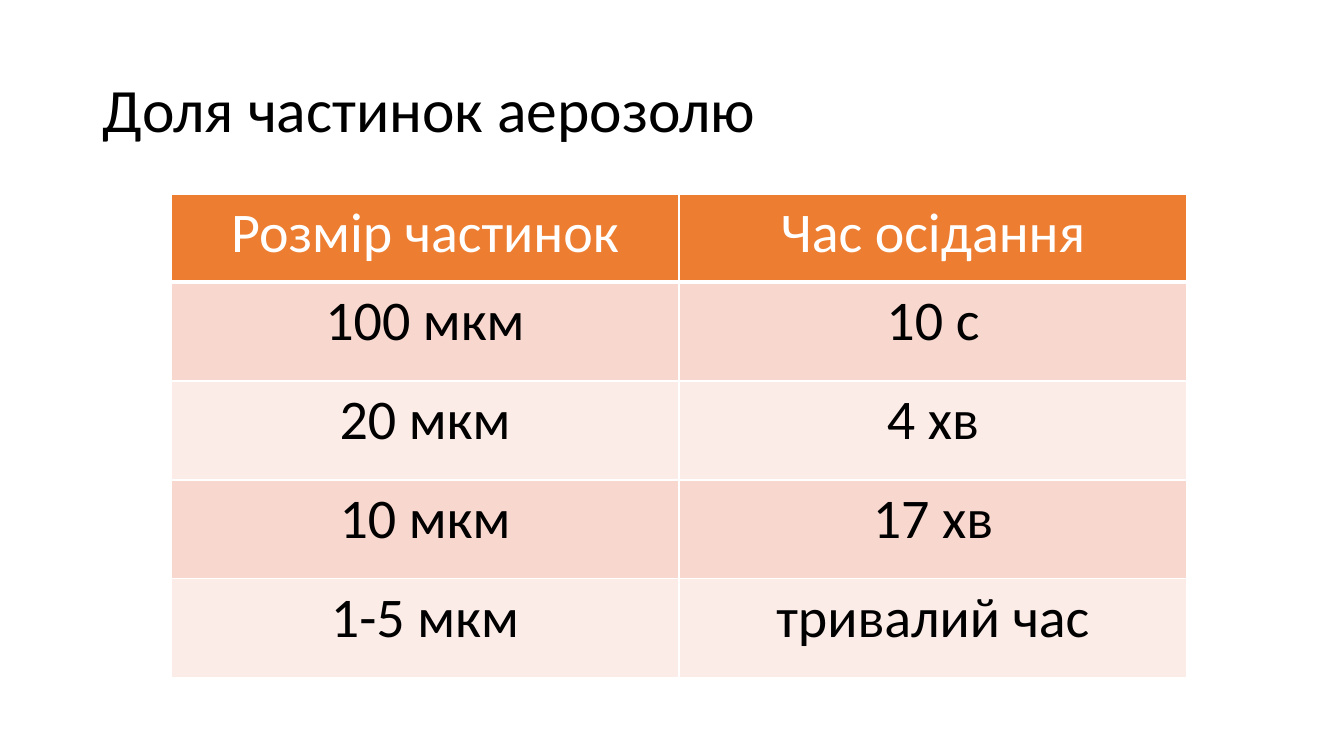
from lxml.etree import SubElement
from pptx import Presentation
from pptx.dml.color import RGBColor
from pptx.enum.text import MSO_ANCHOR as Anchor, PP_ALIGN as Align
from pptx.oxml.ns import qn
from pptx.util import Pt

PX = 914400 / 100.8
FONT = "Calibri"
BLACK, WHITE, ORANGE = "000000", "FFFFFF", "ED7D31"
BANDS = ["F8D7CE", "FCECE8"]

TITLE = "Доля частинок аерозолю"
ROWS = [
    ("Розмір частинок", "Час осідання"),
    ("100 мкм", "10 с"),
    ("20 мкм", "4 хв"),
    ("10 мкм", "17 хв"),
    ("1-5 мкм", "тривалий час"),
]
COLUMN_WIDTH, HEADER_HEIGHT, ROW_HEIGHT = 508, 88, 99


def px(*lengths):
    return [round(length * PX) for length in lengths]


def color(value):
    return RGBColor.from_string(value)


def set_text(frame, text, size, ink, align):
    para = frame.paragraphs[0]
    para.text = text
    para.alignment = align
    para.font.name = FONT
    para.font.size = Pt(size)
    para.font.bold = False
    para.font.color.rgb = color(ink)
    return para


def add_title(page, text):
    box = page.shapes.add_textbox(*px(93, 40, 1159, 146))
    frame = box.text_frame
    frame.word_wrap = True
    frame.vertical_anchor = Anchor.MIDDLE
    para = set_text(frame, text, 44, BLACK, Align.LEFT)
    para.line_spacing = 0.9


def set_borders(cell, bottom):
    """Draw white cell edges, 1 pt wide except for the given bottom width."""
    properties = cell._tc.get_or_add_tcPr()
    for edge, width in (("L", 1), ("R", 1), ("T", 1), ("B", bottom)):
        line = SubElement(properties, qn(f"a:ln{edge}"), w=str(Pt(width)))
        fill = SubElement(line, qn("a:solidFill"))
        SubElement(fill, qn("a:srgbClr"), val=WHITE)


def add_table(page, rows):
    width = COLUMN_WIDTH * len(rows[0])
    height = HEADER_HEIGHT + ROW_HEIGHT * (len(rows) - 1)
    table = page.shapes.add_table(
        len(rows), len(rows[0]), *px(171, 194, width, height)
    ).table
    for column in table.columns:
        column.width = px(COLUMN_WIDTH)[0]
    for index, texts in enumerate(rows):
        header = index == 0
        table.rows[index].height = px(HEADER_HEIGHT if header else ROW_HEIGHT)[0]
        fill = ORANGE if header else BANDS[(index - 1) % len(BANDS)]
        for cell, text in zip(table.rows[index].cells, texts):
            set_borders(cell, bottom=3 if header else 1)
            cell.fill.solid()
            cell.fill.fore_color.rgb = color(fill)
            ink = WHITE if header else BLACK
            set_text(cell.text_frame, text, 40, ink, Align.CENTER)


def main():
    deck = Presentation()
    deck.slide_width, deck.slide_height = px(1344, 756)
    page = deck.slides.add_slide(deck.slide_layouts[6])
    add_title(page, TITLE)
    add_table(page, ROWS)
    deck.save("out.pptx")


if __name__ == "__main__":
    main()
